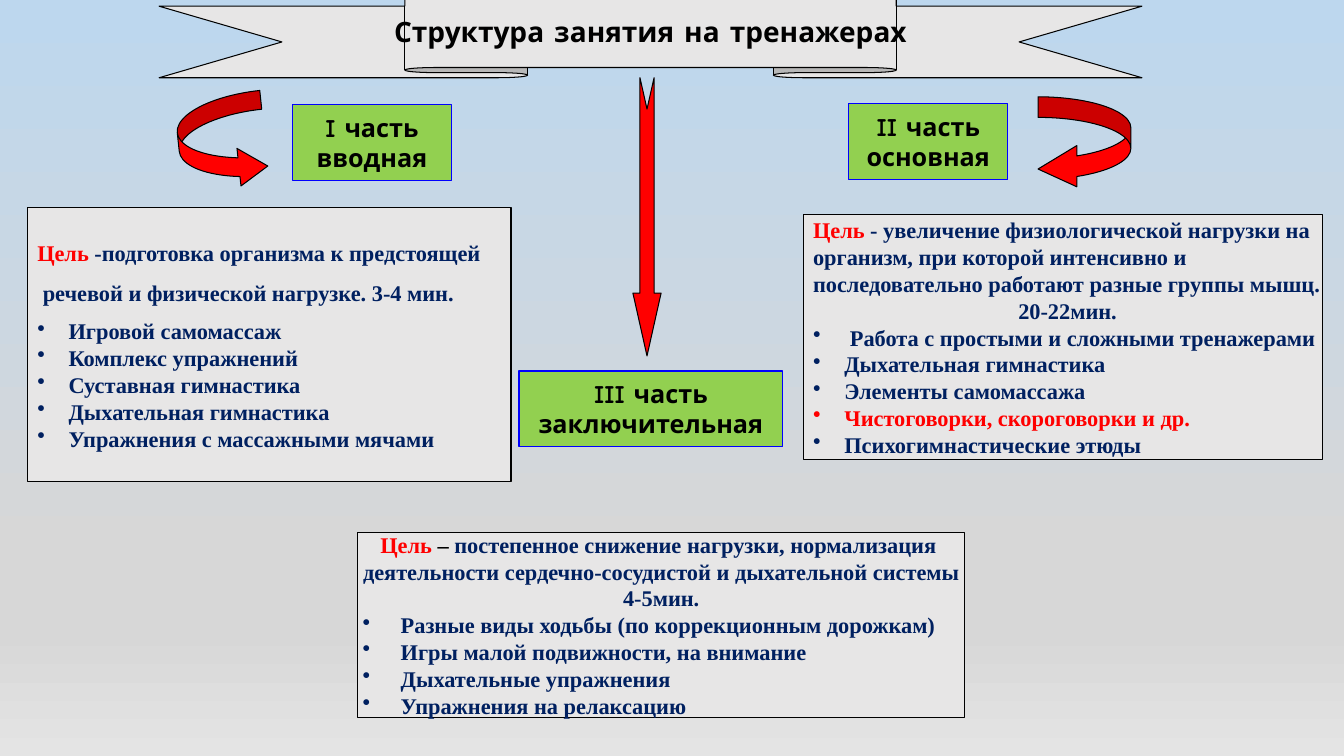
from dataclasses import dataclass

from lxml.etree import SubElement
from pptx import Presentation
from pptx.dml.color import RGBColor
from pptx.enum.shapes import MSO_SHAPE as SHAPE
from pptx.enum.text import MSO_ANCHOR as ANCHOR, PP_ALIGN as ALIGN
from pptx.oxml.ns import qn
from pptx.util import Cm, Pt


@dataclass(frozen=True)
class Theme:
    paper: str = "E7E6E6"
    label: str = "92D050"
    label_line: str = "0000FF"
    red: str = "FF0000"
    navy: str = "002060"
    black: str = "000000"
    sky: tuple = ((0, "BDD7EE"), (74, "D7D7D7"), (83, "D7D7D7"), (100, "E4E4E4"))
    head_font: str = "Comic Neue"
    body_font: str = "Times New Roman"
    title_size: int = 20
    label_size: int = 18
    body_size: int = 16
    line_width: float = 0.75


T = Theme()


def add_background(slide):
    fill = slide.background.fill
    fill.gradient()
    fill.gradient_angle = 270
    stops = slide.element.xpath(".//a:gsLst")[0]
    for stop in list(stops):
        stops.remove(stop)
    for pos, color in T.sky:
        stop = SubElement(stops, qn("a:gs"), pos=str(pos * 1000))
        SubElement(stop, qn("a:srgbClr"), val=color)


def add_figure(slide, kind, box, fill, line=T.black, adjust=(), rotation=0):
    sp = slide.shapes.add_shape(kind, *map(Cm, box))
    sp.shadow.inherit = False
    sp.fill.solid()
    sp.fill.fore_color.rgb = RGBColor.from_string(fill)
    sp.line.color.rgb = RGBColor.from_string(line)
    sp.line.width = Pt(T.line_width)
    for i, value in enumerate(adjust):
        sp.adjustments[i] = value
    sp.rotation = rotation
    return sp


def setup_frame(sp, left=0, right=0, wrap=False):
    tf = sp.text_frame
    tf.word_wrap = wrap
    tf.vertical_anchor = ANCHOR.MIDDLE
    tf.margin_left, tf.margin_right = Cm(left), Cm(right)
    tf.margin_top = tf.margin_bottom = 0
    return tf


def next_paragraph(tf, align):
    first = tf.paragraphs[0]
    p = tf.add_paragraph() if first.runs else first
    p.alignment = align
    return p


def add_run(p, text, size, font, color):
    r = p.add_run()
    r.text = text
    r.font.size = Pt(size)
    r.font.name = font
    r.font.bold = True
    r.font.color.rgb = RGBColor.from_string(color)


def add_title(slide, box, text):
    sp = add_figure(slide, SHAPE.UP_RIBBON, box, T.paper, adjust=(0.125, 0.5))
    p = next_paragraph(setup_frame(sp), ALIGN.CENTER)
    add_run(p, text, T.title_size, T.head_font, T.black)


def add_label(slide, box, lines):
    sp = add_figure(slide, SHAPE.RECTANGLE, box, T.label, T.label_line)
    tf = setup_frame(sp)
    for line in lines:
        p = next_paragraph(tf, ALIGN.CENTER)
        add_run(p, line, T.label_size, T.head_font, T.black)


def add_goal(tf, lines, spaced=False):
    """Write the aim; each line is (alignment, [(text, color), ...])."""
    for align, runs in lines:
        p = next_paragraph(tf, align)
        if spaced:
            p.line_spacing, p.space_after = 1.07, Pt(8)
        for text, color in runs:
            add_run(p, text, T.body_size, T.body_font, color)


def add_bullets(tf, items, hang, highlight=()):
    for item in items:
        p = next_paragraph(tf, ALIGN.LEFT)
        pPr = p._p.get_or_add_pPr()
        pPr.set("marL", str(Cm(hang)))
        pPr.set("indent", str(-Cm(hang)))
        SubElement(pPr, qn("a:buChar"), char="•")
        color = T.red if item in highlight else T.navy
        add_run(p, item, T.body_size, T.body_font, color)


def add_panel(slide, box, goal, items, hang=0.79, left=0.25, right=0,
              wrap=False, spaced=False, highlight=()):
    tf = setup_frame(add_figure(slide, SHAPE.RECTANGLE, box, T.paper),
                     left, right, wrap)
    add_goal(tf, goal, spaced)
    add_bullets(tf, items, hang, highlight)


def add_arrows(slide):
    add_figure(slide, SHAPE.CURVED_RIGHT_ARROW, (4.5, 2.39, 2.18, 2.39), T.red,
               adjust=(0.218, 0.436, 0.333), rotation=353.9)
    add_figure(slide, SHAPE.CURVED_LEFT_ARROW, (26.16, 2.44, 2.34, 2.34), T.red,
               adjust=(0.222, 0.444, 0.418))
    add_figure(slide, SHAPE.NOTCHED_RIGHT_ARROW, (12.8, 5.11, 7.01, 0.71), T.red,
               adjust=(0.5, 2.228), rotation=90)


def build_lesson_slide(slide):
    add_background(slide)
    add_title(slide, (4.01, -0.1, 24.77, 2.06), "Структура занятия на тренажерах")
    add_label(slide, (7.37, 2.64, 4.01, 1.9), ("I часть", "вводная"))
    add_label(slide, (21.39, 2.62, 4.01, 1.9), ("II часть", "основная"))
    add_label(slide, (13.08, 9.35, 6.65, 1.9), ("III часть", "заключительная"))

    aim = ("Цель", T.red)
    add_panel(
        slide, (0.69, 5.23, 12.19, 6.91),
        [(ALIGN.LEFT, [aim, (" -подготовка организма к предстоящей", T.navy)]),
         (ALIGN.LEFT, [(" речевой и физической нагрузке. 3-4 мин.", T.navy)])],
        ["Игровой самомассаж", "Комплекс упражнений", "Суставная гимнастика",
         "Дыхательная гимнастика", "Упражнения с массажными мячами"],
        wrap=True, spaced=True)
    add_panel(
        slide, (20.24, 5.41, 13.08, 6.17),
        [(ALIGN.LEFT, [aim, (" - увеличение физиологической нагрузки на", T.navy)]),
         (ALIGN.LEFT, [("организм, при которой интенсивно и", T.navy)]),
         (ALIGN.LEFT, [("последовательно работают разные группы мышц.", T.navy)]),
         (ALIGN.CENTER, [("20-22мин.", T.navy)])],
        [" Работа с простыми и сложными тренажерами", "Дыхательная гимнастика",
         "Элементы самомассажа", "Чистоговорки, скороговорки и др.",
         "Психогимнастические этюды"],
        highlight=("Чистоговорки, скороговорки и др.",))
    add_panel(
        slide, (9.02, 13.41, 15.29, 4.67),
        [(ALIGN.CENTER, [aim, (" – ", T.black),
                         ("постепенное снижение нагрузки, нормализация ", T.navy)]),
         (ALIGN.CENTER, [("деятельности сердечно-сосудистой и дыхательной системы",
                          T.navy)]),
         (ALIGN.CENTER, [("4-5мин.", T.navy)])],
        ["Разные виды ходьбы (по коррекционным дорожкам)",
         "Игры малой подвижности, на внимание", "Дыхательные упражнения",
         "Упражнения на релаксацию"],
        hang=0.96, left=0.12, right=0.12)
    add_arrows(slide)


def main():
    prs = Presentation()
    prs.slide_width, prs.slide_height = Cm(33.87), Cm(19.05)
    build_lesson_slide(prs.slides.add_slide(prs.slide_layouts[6]))
    prs.save("out.pptx")


if __name__ == "__main__":
    main()
